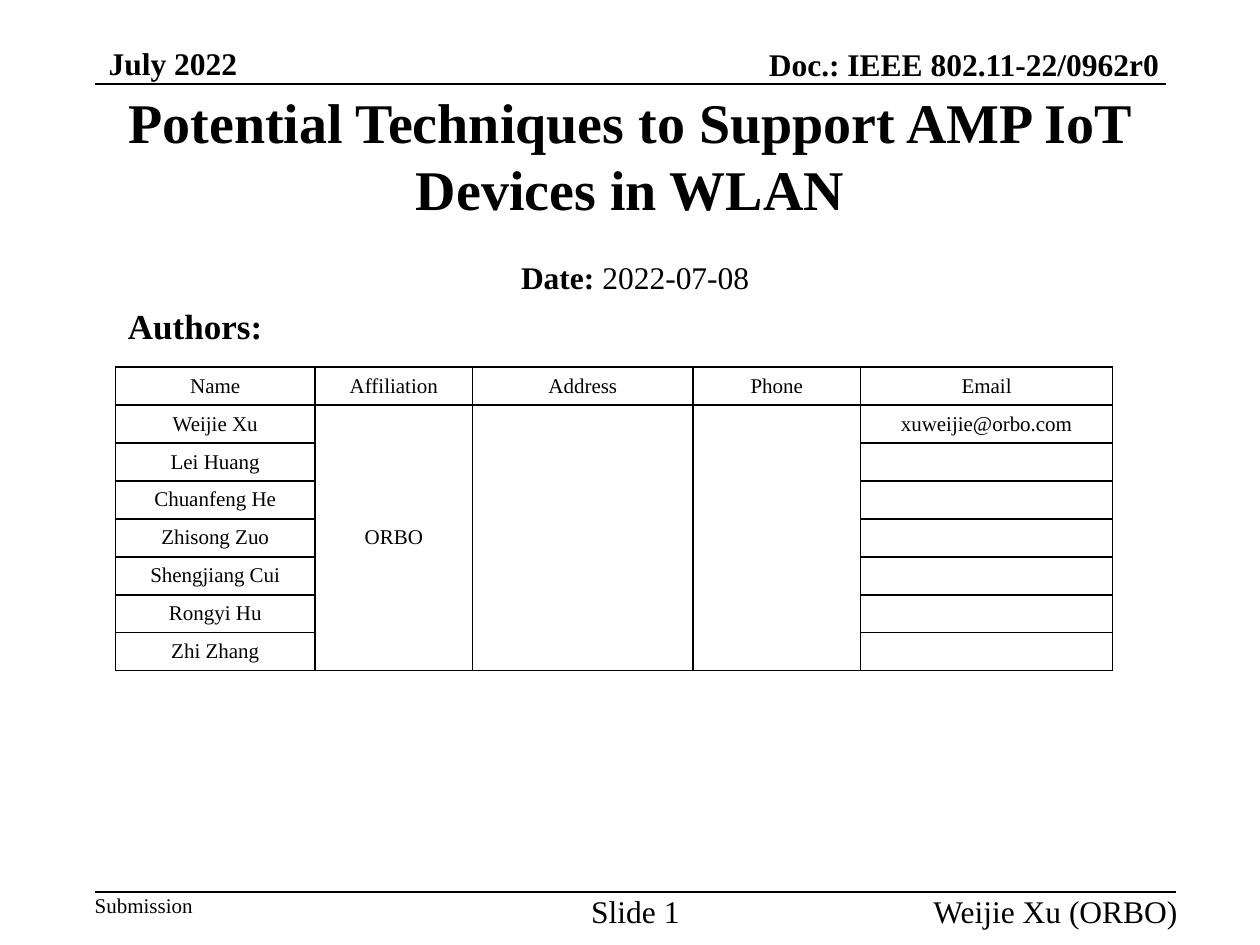
from lxml import etree
from pptx import Presentation
from pptx import util as u
from pptx.dml.color import RGBColor
from pptx.enum import shapes, text
from pptx.oxml.ns import qn

FONT = "Times New Roman"
INK, PAPER = "000000", "FFFFFF"
LEFT, MID, RIGHT = text.PP_ALIGN.LEFT, text.PP_ALIGN.CENTER, text.PP_ALIGN.RIGHT
PAD = (0.25, 0.13)

HEADS = ["Name", "Affiliation", "Address", "Phone", "Email"]
NAMES = ["Weijie Xu", "Lei Huang", "Chuanfeng He", "Zhisong Zuo",
         "Shengjiang Cui", "Rongyi Hu", "Zhi Zhang"]
FIRM, MAIL = "ORBO", "xuweijie@orbo.com"
WIDTHS = [4.02, 3.18, 4.44, 3.38, 5.08]


def paint(color, tone):
    color.rgb = RGBColor.from_string(tone)


def style(run, size, bold=False):
    run.font.name = FONT
    run.font.size = u.Pt(size)
    run.font.bold = bold
    paint(run.font.color, INK)


def label(slide, box, words, size, bold=False, align=LEFT, pad=PAD,
          anchor=text.MSO_ANCHOR.TOP, before=0):
    frame = slide.shapes.add_textbox(*map(u.Cm, box)).text_frame
    frame.word_wrap = True
    frame.vertical_anchor = anchor
    frame.margin_left = frame.margin_right = u.Cm(pad[0])
    frame.margin_top = frame.margin_bottom = u.Cm(pad[1])
    para = frame.paragraphs[0]
    para.text = words
    para.alignment = align
    para.space_before = u.Pt(before)
    style(para.runs[0], size, bold)
    return para


def rule(slide, left, top, width):
    line = slide.shapes.add_connector(
        shapes.MSO_CONNECTOR.STRAIGHT,
        u.Cm(left), u.Cm(top), u.Cm(left + width), u.Cm(top))
    paint(line.line.color, INK)
    line.line.width = u.Pt(1)
    etree.SubElement(line._element.spPr, qn("a:effectLst"))


def border(cell):
    props = cell._tc.get_or_add_tcPr()
    for spot, side in enumerate(("a:lnL", "a:lnR", "a:lnT", "a:lnB")):
        line = etree.Element(qn(side), w=str(u.Pt(1)))
        fill = etree.SubElement(line, qn("a:solidFill"))
        etree.SubElement(fill, qn("a:srgbClr"), val=INK)
        props.insert(spot, line)


def fill_cell(cell, words):
    cell.fill.solid()
    paint(cell.fill.fore_color, PAPER)
    border(cell)
    cell.vertical_anchor = text.MSO_ANCHOR.MIDDLE
    cell.margin_left = cell.margin_right = u.Cm(0.18)
    cell.margin_top = cell.margin_bottom = 0
    para = cell.text_frame.paragraphs[0]
    para.alignment = MID
    if words:
        para.text = words
        style(para.runs[0], 12)
    else:
        # Keeps an empty row as low as the others
        etree.SubElement(para._p, qn("a:endParaRPr"), sz="1200")


def header(slide, left, top, width):
    rule(slide, left, top + 0.94, width)
    label(slide, (left + 0.03, top, 6.4, 0.91), "July 2022", 18, True)
    label(slide, (left + 13.34, top + 0.02, 8.69, 1.02),
          "Doc.: IEEE 802.11-22/0962r0", 18, True)


def heading(slide, left, top, width):
    label(slide, (left, top, width, 2.41),
          "Potential Techniques to Support AMP IoT Devices in WLAN",
          32, True, MID, anchor=text.MSO_ANCHOR.MIDDLE)
    date = label(slide, (left + 0.1, top + 3.17, width, 11.86),
                 "Date:", 18, True, MID, before=2)
    day = date.add_run()
    day.text = " 2022-07-08"
    style(day, 18)


def authors(slide, left, top, height):
    label(slide, (left, top, 3.81, 0.69), "Authors:", 20, True, before=2)

    # Table with three columns merged below the head row
    rows = [HEADS] + [[name, "", "", "", ""] for name in NAMES]
    rows[1][1], rows[1][4] = FIRM, MAIL
    grid = slide.shapes.add_table(
        len(rows), len(HEADS), u.Cm(left), u.Cm(top + 1.39),
        u.Cm(sum(WIDTHS)), u.Cm(height)).table
    for col, width in zip(grid.columns, WIDTHS):
        col.width = u.Cm(width)
    for r, row in enumerate(rows):
        grid.rows[r].height = u.Cm(height / len(rows))
        for c, words in enumerate(row):
            fill_cell(grid.cell(r, c), words)
    for c in (1, 2, 3):
        grid.cell(1, c).merge(grid.cell(len(NAMES), c))


def footer(slide, left, top, width):
    flat = (0, 0)
    rule(slide, left, top, width)
    # Boxes are wider than their words, so each stays on one line
    label(slide, (left, top, 2.6, 0.51), "Submission", 12, pad=flat)
    label(slide, (left + 9.6, top, 2.6, 0.51), "Slide 1", 18,
          align=MID, pad=flat)
    label(slide, (left + width - 7.62, top, 7.65, 0.51),
          f"Weijie Xu ({FIRM})", 18, align=RIGHT, pad=flat)


def main():
    deck = Presentation()
    deck.slide_width, deck.slide_height = u.Cm(25.4), u.Cm(19.05)
    slide = deck.slides.add_slide(deck.slide_layouts[6])
    header(slide, 1.91, 0.76, 21.59)
    heading(slide, 1.91, 1.91, 21.59)
    authors(slide, 2.33, 6.01, 6.12)
    footer(slide, 1.91, 17.99, 21.8)
    deck.save("out.pptx")


if __name__ == "__main__":
    main()
